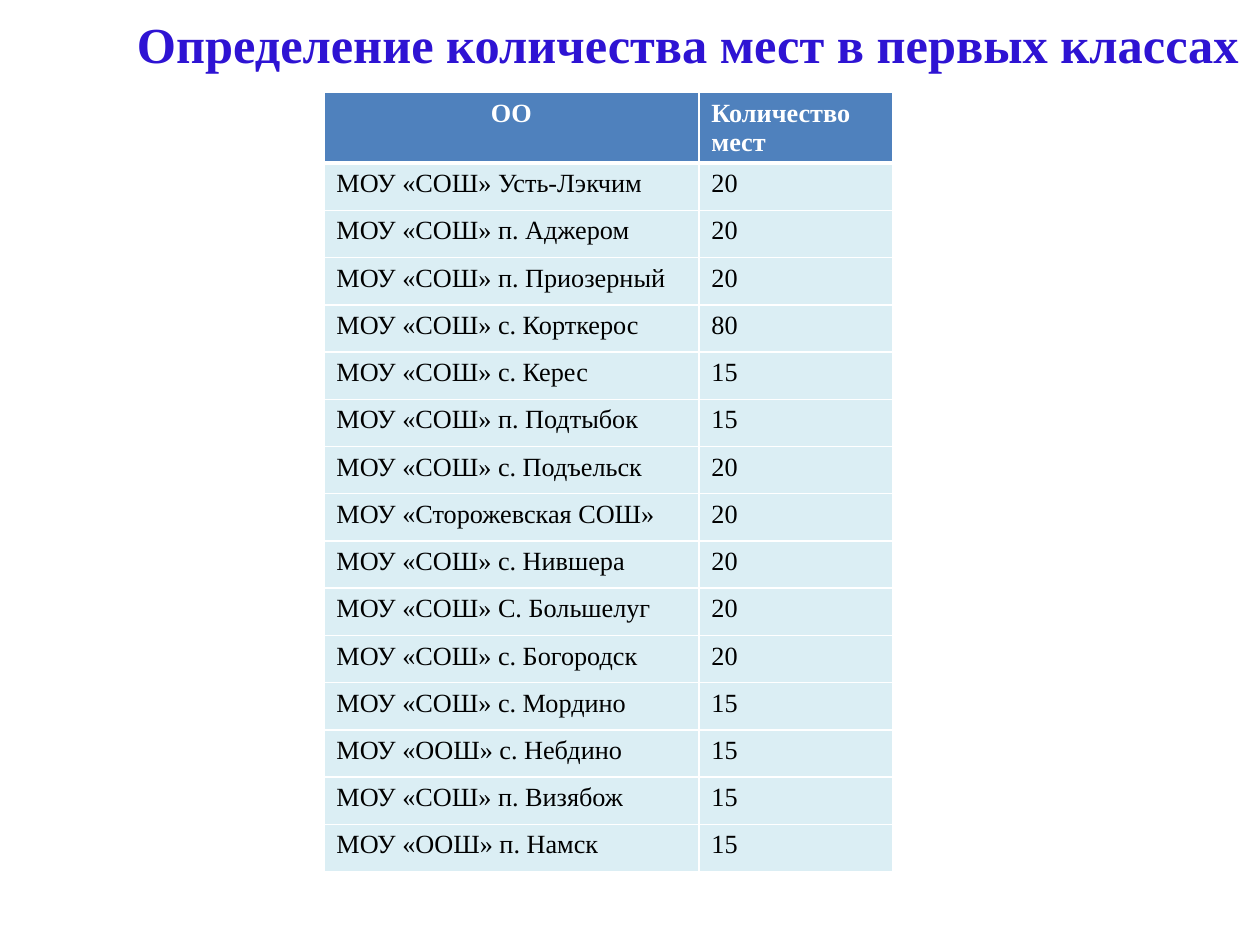
from typing import NamedTuple

from lxml.etree import SubElement
from pptx import Presentation
from pptx.dml.color import RGBColor
from pptx.enum.text import MSO_ANCHOR, MSO_AUTO_SIZE, PP_ALIGN
from pptx.oxml.ns import qn
from pptx.util import Emu, Pt

EMU_PER_PX = 914400 // 128
FONT = "Times New Roman"
COLORS = {
    "title": "2E13D3",
    "header": "4F81BD",
    "row": "DBEEF4",
    "white": "FFFFFF",
    "text": "000000",
}


class School(NamedTuple):
    name: str
    places: int


class TextStyle(NamedTuple):
    size: float
    color: str
    bold: bool
    align: PP_ALIGN = PP_ALIGN.LEFT


class CellStyle(NamedTuple):
    text: TextStyle
    fill: str
    top: int = 1
    bottom: int = 1


SCHOOLS = [
    School("МОУ «СОШ» Усть-Лэкчим", 20),
    School("МОУ «СОШ» п. Аджером", 20),
    School("МОУ «СОШ» п. Приозерный", 20),
    School("МОУ «СОШ» с. Корткерос", 80),
    School("МОУ «СОШ» с. Керес", 15),
    School("МОУ «СОШ» п. Подтыбок", 15),
    School("МОУ «СОШ» с. Подъельск", 20),
    School("МОУ «Сторожевская СОШ»", 20),
    School("МОУ «СОШ» с. Нившера", 20),
    School("МОУ «СОШ» С. Большелуг", 20),
    School("МОУ «СОШ» с. Богородск", 20),
    School("МОУ «СОШ» с. Мордино", 15),
    School("МОУ «ООШ» с. Небдино", 15),
    School("МОУ «СОШ» п. Визябож", 15),
    School("МОУ «ООШ» п. Намск", 15),
]
COLUMN_WIDTHS = (381, 197)
HEADER_HEIGHT = 70
ROW_HEIGHT = 48

TITLE_TEXT = TextStyle(28.8, "title", True, PP_ALIGN.CENTER)
HEADER_TEXT = TextStyle(15, "white", True)
ROW_TEXT = TextStyle(15, "text", False)


def px(length: int) -> Emu:
    return Emu(length * EMU_PER_PX)


def rgb(name: str) -> RGBColor:
    return RGBColor.from_string(COLORS[name])


def write(frame, text: str, style: TextStyle) -> None:
    paragraph = frame.paragraphs[0]
    paragraph.alignment = style.align
    run = paragraph.add_run()
    run.text = text
    run.font.name = FONT
    run.font.size = Pt(style.size)
    run.font.bold = style.bold
    run.font.color.rgb = rgb(style.color)


def add_borders(cell, top: int, bottom: int) -> None:
    properties = cell._tc.get_or_add_tcPr()
    for side, width in (("L", 1), ("R", 1), ("T", top), ("B", bottom)):
        line = SubElement(properties, qn(f"a:ln{side}"), w=str(Pt(width)))
        fill = SubElement(line, qn("a:solidFill"))
        SubElement(fill, qn("a:srgbClr"), val=COLORS["white"])


def draw_cell(cell, text: str, style: CellStyle) -> None:
    add_borders(cell, style.top, style.bottom)
    cell.fill.solid()
    cell.fill.fore_color.rgb = rgb(style.fill)
    write(cell.text_frame, text, style.text)


def draw_title(slide, text: str) -> None:
    title = slide.shapes.title
    title.left, title.top, title.width, title.height = map(px, (100, 22, 1198, 45))
    frame = title.text_frame
    frame.word_wrap = True
    frame.auto_size = MSO_AUTO_SIZE.NONE
    frame.vertical_anchor = MSO_ANCHOR.MIDDLE
    write(frame, text, TITLE_TEXT)


def draw_places(slide, schools: list[School]) -> None:
    height = HEADER_HEIGHT + ROW_HEIGHT * len(schools)
    table = slide.shapes.add_table(
        len(schools) + 1, len(COLUMN_WIDTHS),
        px(329), px(94), px(sum(COLUMN_WIDTHS)), px(height),
    ).table
    for column, width in zip(table.columns, COLUMN_WIDTHS):
        column.width = px(width)
    for index, row in enumerate(table.rows):
        row.height = px(ROW_HEIGHT if index else HEADER_HEIGHT)

    heading = CellStyle(HEADER_TEXT, "header", bottom=3)
    centered = heading._replace(text=HEADER_TEXT._replace(align=PP_ALIGN.CENTER))
    draw_cell(table.cell(0, 0), "ОО", centered)
    draw_cell(table.cell(0, 1), "Количество мест", heading)
    for index, school in enumerate(schools, start=1):
        style = CellStyle(ROW_TEXT, "row", top=3 if index == 1 else 1)
        for column, value in enumerate(school):
            draw_cell(table.cell(index, column), str(value), style)


def main() -> None:
    presentation = Presentation()
    presentation.slide_width = px(1280)
    presentation.slide_height = px(960)
    slide = presentation.slides.add_slide(presentation.slide_layouts[5])
    draw_title(slide, "Определение количества мест в первых классах")
    draw_places(slide, SCHOOLS)
    presentation.save("out.pptx")


if __name__ == "__main__":
    main()
